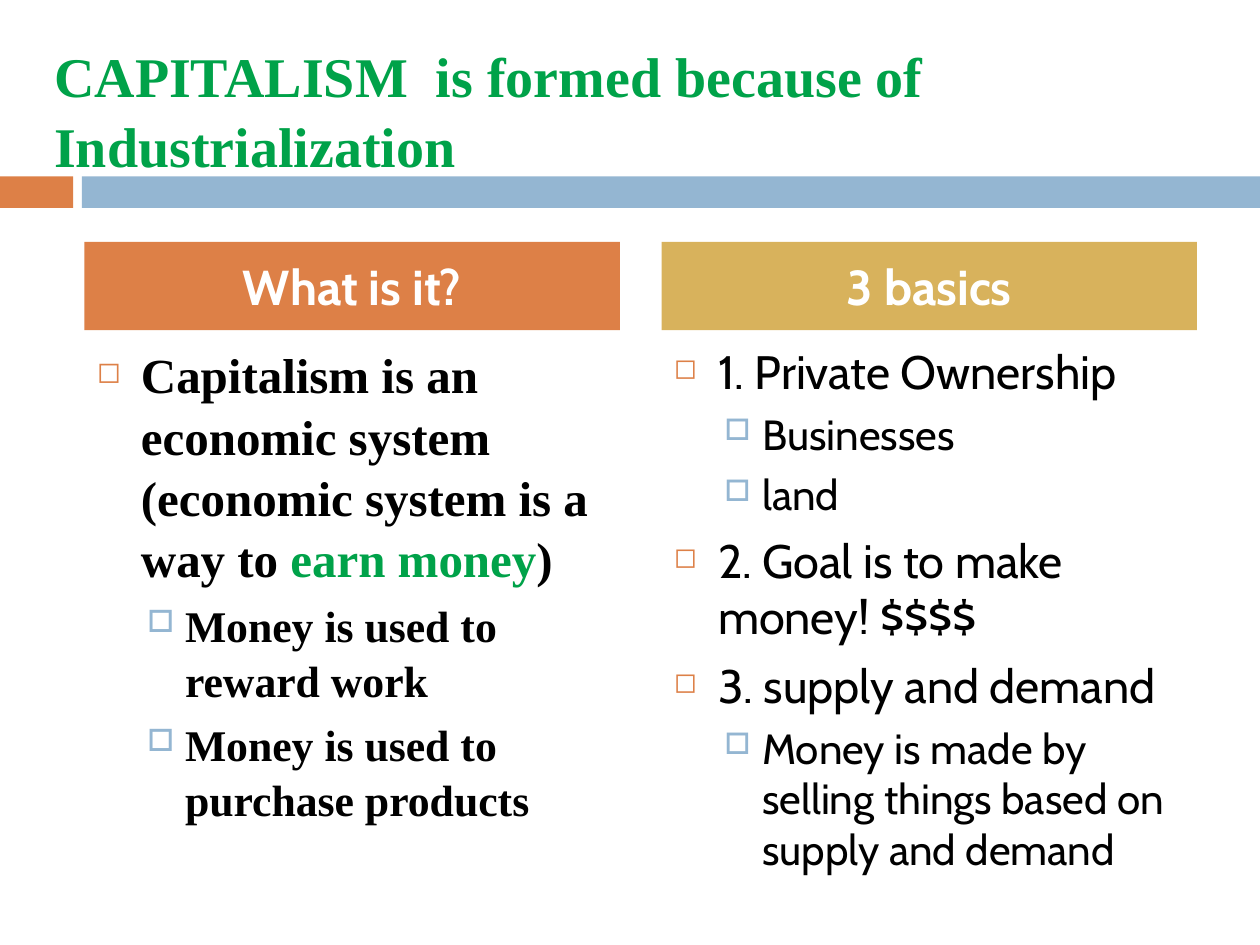
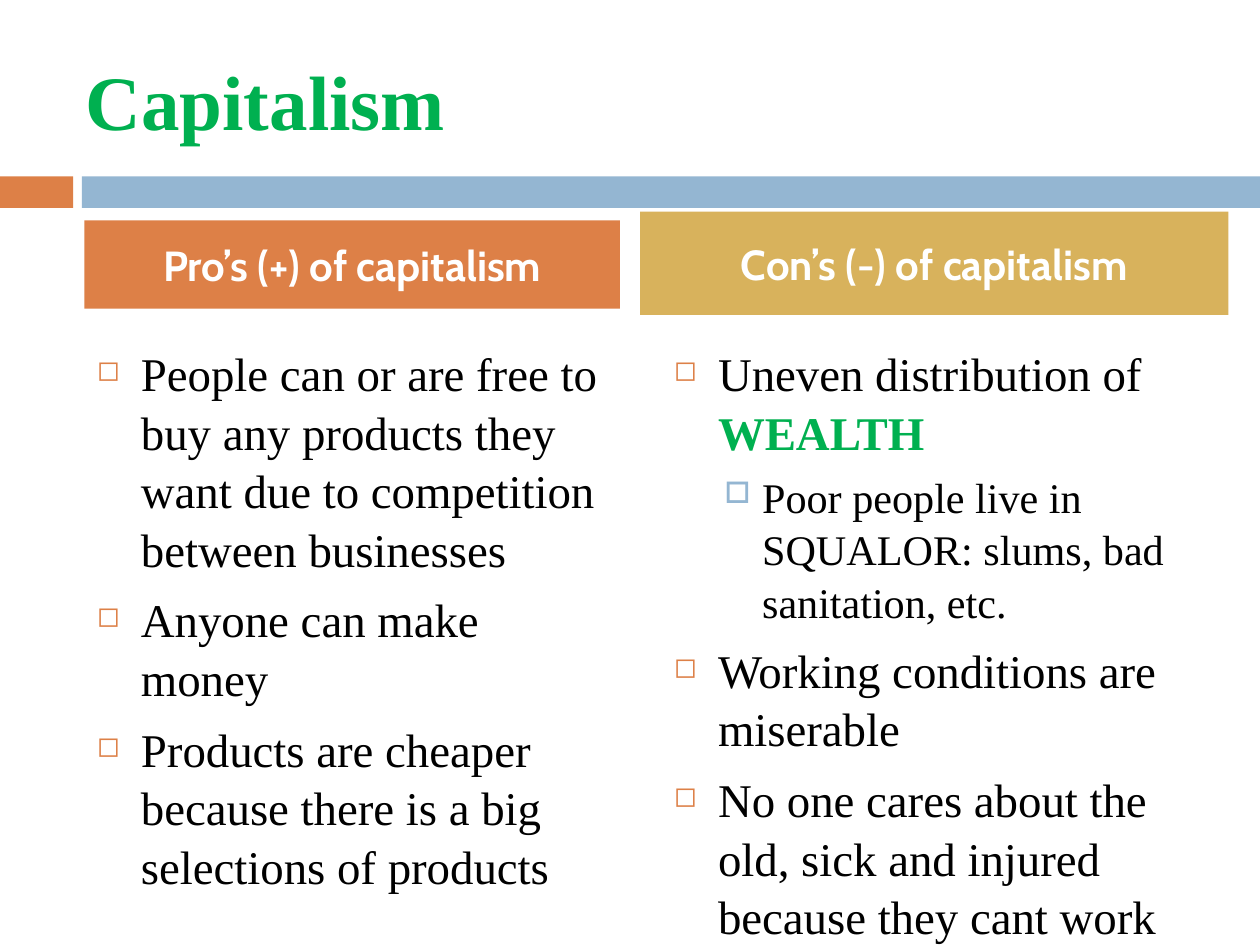
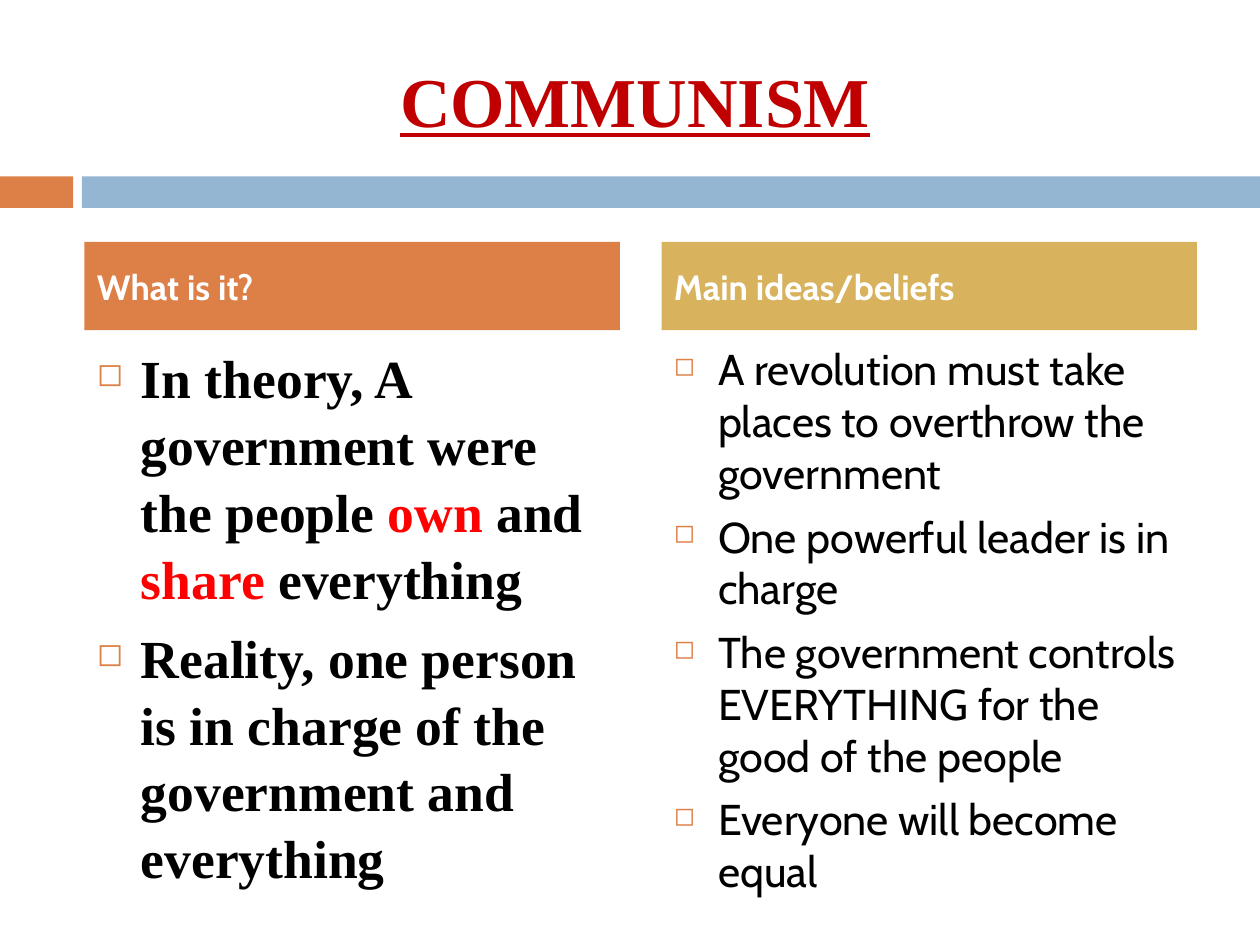
from dataclasses import dataclass
from typing import Optional

from lxml import etree
from pptx import Presentation
from pptx.dml.color import RGBColor
from pptx.enum.shapes import MSO_SHAPE
from pptx.enum.text import MSO_ANCHOR, MSO_AUTO_SIZE, PP_ALIGN
from pptx.oxml.ns import qn
from pptx.util import Inches, Pt

RECT = MSO_SHAPE.RECTANGLE
MIDDLE, TOP = MSO_ANCHOR.MIDDLE, MSO_ANCHOR.TOP
LEFT, CENTER = PP_ALIGN.LEFT, PP_ALIGN.CENTER
NO_FIT = MSO_AUTO_SIZE.NONE
TITLE_ONLY = 5


@dataclass(frozen=True)
class Theme:
    orange: str = "DD8047"
    blue: str = "94B6D2"
    gold: str = "D8B25C"
    white: str = "FFFFFF"
    black: str = "000000"
    deep_green: str = "00A249"
    green: str = "00B050"
    dark_red: str = "C00000"
    red: str = "FF0000"
    sans: str = "Cabin"
    serif: str = "Times New Roman"
    serif_title_spacing: float = 1.05
    serif_body_spacing: float = 1.04
    # Title sizes
    title_small: float = 32
    title_mid: float = 40
    title_big: float = 44
    # Header sizes
    header_small: float = 20
    header_mid: float = 24
    header_big: float = 28
    # Body sizes, as (first level, second level)
    body: tuple[float, float] = (26.8, 24.1)
    body_strong: tuple[float, float] = (28, 25)
    body_large: tuple[float, float] = (30.6, 27)
    body_compact: tuple[float, float] = (24.6, 22)


T = Theme()


@dataclass(frozen=True)
class Box:
    x: float
    y: float
    w: float
    h: float

    def emu(self) -> tuple[int, int, int, int]:
        return Inches(self.x), Inches(self.y), Inches(self.w), Inches(self.h)


@dataclass(frozen=True)
class Level:
    indent: float
    hanging: float
    before: float
    bullet: str
    color: str
    percent: int


@dataclass(frozen=True)
class Span:
    text: str
    color: str = T.black
    bold: bool = False


@dataclass(frozen=True)
class Item:
    spans: tuple[Span, ...]
    level: int = 0


@dataclass(frozen=True)
class Title:
    text: str
    size: float
    color: str
    box: Box = Box(0.58, 0.3, 8.92, 0.95)
    align: PP_ALIGN = LEFT
    underline: bool = False


@dataclass(frozen=True)
class Column:
    header: str
    items: tuple[Item, ...]
    font: str = T.serif
    sizes: tuple[float, float] = T.body
    bold: bool = False
    header_box: Optional[Box] = None


@dataclass(frozen=True)
class Page:
    title: Title
    columns: tuple[Column, Column]
    header_size: float
    header_align: PP_ALIGN = CENTER


# Shared layout
LEVELS = (
    Level(0.35, 0.35, 7, "◻", T.orange, 60),
    Level(0.7, 0.3, 5.5, "□", T.blue, 70),
)
BANDS = ((Box(0, 1.4, 0.58, 0.25), T.orange), (Box(0.65, 1.4, 9.35, 0.25), T.blue))
COLUMN_X = (0.67, 5.25)
COLUMN_W = 4.25
HEADER_FILLS = (T.orange, T.gold)


def item(*parts: str | Span, level: int = 0) -> Item:
    return Item(tuple(p if isinstance(p, Span) else Span(p) for p in parts), level)


# Drawing helpers
def add_run(p, text: str, font: str, size: float, color: str, bold: bool):
    r = p.add_run()
    r.text = text
    r.font.name = font
    r.font.size = Pt(size)
    r.font.bold = bold
    r.font.color.rgb = RGBColor.from_string(color)
    return r


def set_frame(tf, anchor: MSO_ANCHOR) -> None:
    tf.word_wrap = True
    tf.auto_size = NO_FIT
    tf.vertical_anchor = anchor


def add_rect(s, box: Box, color: str):
    sp = s.shapes.add_shape(RECT, *box.emu())
    sp.shadow.inherit = False
    sp.fill.solid()
    sp.fill.fore_color.rgb = RGBColor.from_string(color)
    sp.line.fill.background()
    return sp


def set_bullet(p, level: Level) -> None:
    pPr = p._p.get_or_add_pPr()
    pPr.set("marL", str(Inches(level.indent)))
    pPr.set("indent", str(-Inches(level.hanging)))
    clr = etree.SubElement(pPr, qn("a:buClr"))
    etree.SubElement(clr, qn("a:srgbClr"), val=level.color)
    etree.SubElement(pPr, qn("a:buSzPct"), val=str(level.percent * 1000))
    etree.SubElement(pPr, qn("a:buChar"), char=level.bullet)


def draw_title(s, title: Title) -> None:
    sp = s.shapes.title
    sp.left, sp.top, sp.width, sp.height = title.box.emu()
    set_frame(sp.text_frame, MIDDLE)
    p = sp.text_frame.paragraphs[0]
    p.alignment = title.align
    p.line_spacing = T.serif_title_spacing
    r = add_run(p, title.text, T.serif, title.size, title.color, True)
    r.font.underline = title.underline


def draw_header(s, text: str, box: Box, fill: str, size: float, align: PP_ALIGN) -> None:
    tf = add_rect(s, box, fill).text_frame
    set_frame(tf, MIDDLE)
    p = tf.paragraphs[0]
    p.alignment = align
    p.space_before = Pt(LEVELS[0].before)
    add_run(p, text, T.sans, size, T.white, True)


def draw_body(s, column: Column, x: float) -> None:
    tf = s.shapes.add_textbox(*Box(x, 2.67, COLUMN_W, 3.92).emu()).text_frame
    set_frame(tf, TOP)
    for i, entry in enumerate(column.items):
        p = tf.add_paragraph() if i else tf.paragraphs[0]
        level = LEVELS[entry.level]
        p.level = entry.level
        p.space_before = Pt(level.before)
        if column.font == T.serif:
            p.line_spacing = T.serif_body_spacing
        set_bullet(p, level)
        for span in entry.spans:
            add_run(p, span.text, column.font, column.sizes[entry.level],
                    span.color, column.bold or span.bold)


def draw_page(prs, page: Page) -> None:
    s = prs.slides.add_slide(prs.slide_layouts[TITLE_ONLY])
    for box, color in BANDS:
        add_rect(s, box, color)
    draw_title(s, page.title)
    for column, x, fill in zip(page.columns, COLUMN_X, HEADER_FILLS):
        draw_body(s, column, x)
        box = column.header_box or Box(x, 1.92, COLUMN_W, 0.7)
        draw_header(s, column.header, box, fill, page.header_size, page.header_align)


# Content
PAGES = (
    Page(
        Title("CAPITALISM  is formed because of Industrialization",
              T.title_small, T.deep_green, Box(0.33, 0.3, 9.33, 1.12)),
        (
            Column("What is it?", (
                item("Capitalism is an economic system (economic system is a way to ",
                     Span("earn money", T.deep_green), ")"),
                item("Money is used to reward work", level=1),
                item("Money is used to purchase products", level=1),
            ), sizes=T.body_strong, bold=True),
            Column("3 basics", (
                item("1. Private Ownership"),
                item("Businesses", level=1),
                item("land", level=1),
                item("2. Goal is to make money! $$$$"),
                item("3. supply and demand"),
                item("Money is made by selling things based on supply and demand", level=1),
            ), font=T.sans),
        ),
        T.header_big,
    ),
    Page(
        Title("Capitalism", T.title_big, T.green),
        (
            Column("Pro’s (+) of capitalism", (
                item("People can or are free to buy any products they want "
                     "due to competition  between businesses"),
                item("Anyone can make money"),
                item("Products are cheaper because there is a big selections of products"),
            ), header_box=Box(0.67, 1.75, COLUMN_W, 0.7)),
            Column("Con’s (-) of capitalism", (
                item("Uneven distribution of ", Span("WEALTH", T.green, True)),
                item("Poor people live in SQUALOR: slums, bad sanitation, etc.", level=1),
                item("Working conditions are miserable"),
                item("No one cares about the old, sick and injured because they cant work"),
            ), header_box=Box(5.08, 1.68, 4.67, 0.82)),
        ),
        T.header_mid,
    ),
    Page(
        Title("COMMUNISM", T.title_mid, T.dark_red, align=CENTER, underline=True),
        (
            Column("What is it?", (
                item("In theory, A government were the people ", Span("own", T.red),
                     " and ", Span("share", T.red), " everything"),
                item("Reality, one person is in charge of the government and everything"),
            ), sizes=T.body_large, bold=True),
            Column("Main ideas/beliefs", (
                item("A revolution must take places to overthrow the government"),
                item("One powerful leader is in charge"),
                item("The government controls EVERYTHING for the good of the people"),
                item("Everyone will become equal"),
            ), font=T.sans, sizes=T.body_compact),
        ),
        T.header_small,
        LEFT,
    ),
)


def main() -> None:
    prs = Presentation()
    prs.slide_width, prs.slide_height = Inches(10), Inches(7.5)
    for page in PAGES:
        draw_page(prs, page)
    prs.save("out.pptx")


if __name__ == "__main__":
    main()
